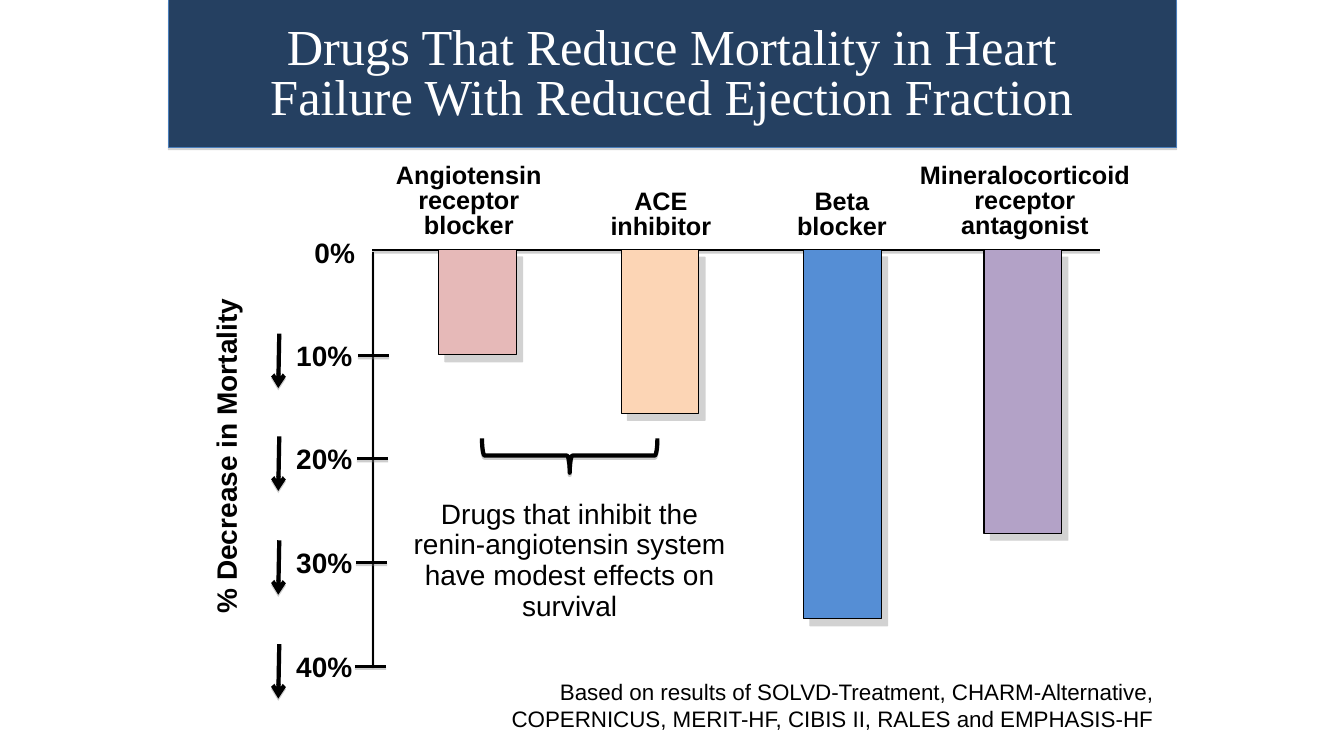
import lxml.etree
import pptx
import pptx.dml.color
import pptx.enum.shapes
import pptx.enum.text
import pptx.oxml.ns
import pptx.util

RGB = pptx.dml.color.RGBColor
SHAPE = pptx.enum.shapes.MSO_SHAPE
ALIGN = pptx.enum.text.PP_ALIGN

BLACK = RGB(0x00, 0x00, 0x00)
WHITE = RGB(0xFF, 0xFF, 0xFF)
GRAY = RGB(0x80, 0x80, 0x80)
NAVY = RGB(0x25, 0x40, 0x61)
EDGE = RGB(0x4A, 0x7E, 0xBB)
PINK = RGB(0xE6, 0xB9, 0xB8)
PEACH = RGB(0xFC, 0xD5, 0xB5)
BLUE = RGB(0x55, 0x8E, 0xD5)
PURPLE = RGB(0xB3, 0xA2, 0xC7)

AXIS_Y = 248
BAR_WIDTH = 77
DRUGS = [
    (435, 104, PINK, "Angiotensin\nreceptor\nblocker", (382, 158, 166, 87)),
    (616, 162, PEACH, "ACE\ninhibitor", (595, 184, 121, 61)),
    (797, 366, BLUE, "Beta\nblocker", (780, 184, 110, 61)),
    (976, 281, PURPLE, "Mineralocorticoid\nreceptor\nantagonist", (901, 158, 231, 87)),
]


class Deck:
    """Holds the style and the current slide, and draws each kind of element."""

    EMU_PER_PX = 9144
    FONT = "Arial"
    LINE_SHADOW = (38, 1.6, 90)

    def __init__(self, width, height):
        self.prs = pptx.Presentation()
        self.prs.slide_width, self.prs.slide_height = self.emu(width, height)
        self.s = self.prs.slides.add_slide(self.prs.slide_layouts[6])

    def emu(self, *lengths):
        return [pptx.util.Emu(n * self.EMU_PER_PX) for n in lengths]

    def add_xml(self, parent, tag, **attributes):
        return lxml.etree.SubElement(parent, pptx.oxml.ns.qn(tag), attributes)

    def style(self, sp, color, width, shadow):
        alpha, dist, angle = shadow
        sp.line.color.rgb = color
        sp.line.width = pptx.util.Pt(width)
        for old in sp.element.spPr.xpath("a:effectLst"):
            sp.element.spPr.remove(old)
        effects = self.add_xml(sp.element.spPr, "a:effectLst")
        outer = self.add_xml(effects, "a:outerShdw", blurRad="0",
                             dist=str(pptx.util.Pt(dist)),
                             dir=str(angle * 60000), rotWithShape="0")
        tint = self.add_xml(outer, "a:srgbClr", val=str(GRAY))
        self.add_xml(tint, "a:alpha", val=str(alpha * 1000))

    def rect(self, box, fill, line, shadow):
        sp = self.s.shapes.add_shape(SHAPE.RECTANGLE, *self.emu(*box))
        sp.fill.solid()
        sp.fill.fore_color.rgb = fill
        self.style(sp, line, 0.75, shadow)

    def brace(self, box, rotation):
        sp = self.s.shapes.add_shape(SHAPE.RIGHT_BRACE, *self.emu(*box))
        sp.rotation = rotation
        sp.adjustments[0] = 0.08
        sp.adjustments[1] = 0.5
        sp.fill.background()
        self.style(sp, BLACK, 3, self.LINE_SHADOW)

    def line(self, x1, y1, x2, y2, width=2, arrow=False):
        sp = self.s.shapes.add_connector(
            pptx.enum.shapes.MSO_CONNECTOR.STRAIGHT, *self.emu(x1, y1, x2, y2))
        self.style(sp, BLACK, width, self.LINE_SHADOW)
        if arrow:
            self.add_xml(sp.element.spPr.xpath("a:ln")[0], "a:tailEnd", type="arrow")

    def text(self, box, words, size, align=ALIGN.CENTER, spacing=None, bold=False,
             wrap=False, color=BLACK, font=FONT, rotation=0):
        sp = self.s.shapes.add_textbox(*self.emu(*box))
        sp.rotation = rotation
        tf = sp.text_frame
        tf.text = words
        tf.word_wrap = wrap
        tf.auto_size = pptx.enum.text.MSO_AUTO_SIZE.SHAPE_TO_FIT_TEXT
        for p in tf.paragraphs:
            p.alignment = align
            if spacing:
                p.line_spacing = pptx.util.Pt(spacing)
            p.font.name = font
            p.font.size = pptx.util.Pt(size)
            p.font.bold = bold
            p.font.color.rgb = color


def main():
    deck = Deck(1333, 750)

    deck.rect((167, 0, 1000, 146), NAVY, EDGE, (35, 1.8, 90))
    deck.text((208, 20, 917, 113),
              "Drugs That Reduce Mortality in Heart Failure With Reduced Ejection Fraction",
              36, spacing=36, wrap=True, color=WHITE, font="Times New Roman")

    deck.line(369, AXIS_Y, 1091, AXIS_Y)
    deck.line(370, 250, 370, 661)
    deck.text((302, 229, 61, 44), "0%", 20, ALIGN.LEFT, bold=True)
    for i in range(4):
        drop = 308 * i // 3
        deck.line(355 - i, 353 + drop, 386 - i, 353 + drop)
        deck.text((284, 331 + drop, 76, 44), f"{10 * (i + 1)}%", 20, ALIGN.LEFT, bold=True)
        deck.line(277, 331 + drop, 276, 385 + drop, width=3, arrow=True)
    deck.text((23, 435, 410, 35), "% Decrease in Mortality", 20,
              spacing=18, bold=True, wrap=True, rotation=270)

    for left, height, fill, name, label_box in DRUGS:
        deck.text(label_box, name, 18, spacing=18, bold=True)
        deck.rect((left, AXIS_Y, BAR_WIDTH, height), fill, BLACK, (35, 6.8, 48))

    deck.brace((548, 365, 34, 174), 90)
    deck.text((400, 490, 330, 134),
              "Drugs that inhibit the renin-angiotensin system have modest effects on survival",
              20, spacing=22, wrap=True)
    deck.text((495, 668, 659, 64),
              "Based on results of SOLVD-Treatment, CHARM-Alternative,\n"
              "COPERNICUS, MERIT-HF, CIBIS II, RALES and EMPHASIS-HF",
              16, ALIGN.RIGHT)

    deck.prs.save("out.pptx")


if __name__ == "__main__":
    main()
